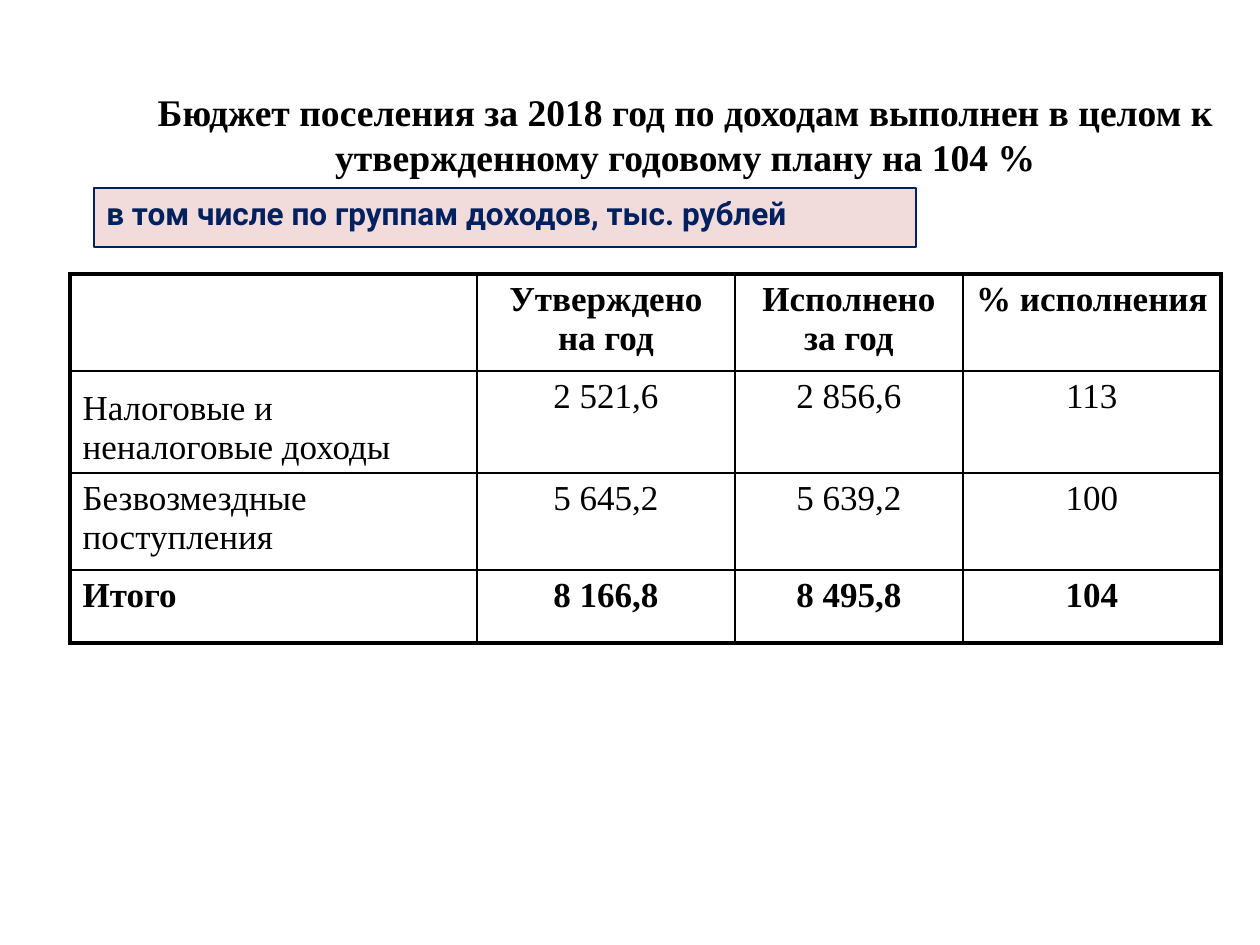
from lxml.etree import SubElement
from pptx import Presentation
from pptx.dml.color import RGBColor
from pptx.enum.shapes import MSO_SHAPE
from pptx.enum.text import MSO_ANCHOR, PP_ALIGN
from pptx.oxml.ns import qn
from pptx.util import Emu, Pt

THEME = {
    "black": "000000", "navy": "002060", "rose": "F2DCDB",
    "serif": "Times New Roman", "sans": "Roboto",
    "title": 21.5, "subtitle": 18, "body": 20,
    "frame": 2.25, "grid": 1, "outline": 0.75,
}


def px(count):
    return Emu(round(count * 914400 / 126))


def write(frame, text, face, size, color, bold, align):
    """Fill a text frame with one uniformly styled paragraph."""
    frame.word_wrap = True
    paragraph = frame.paragraphs[0]
    paragraph.text = text
    paragraph.alignment = align
    font = paragraph.font
    font.name, font.size, font.bold = THEME[face], Pt(THEME[size]), bold
    font.color.rgb = RGBColor.from_string(THEME[color])


prs = Presentation()
prs.slide_width, prs.slide_height = px(1260), px(945)
slide = prs.slides.add_slide(prs.slide_layouts[6])

title = slide.shapes.add_textbox(px(129), px(83), px(1113), px(103))
write(title.text_frame,
      "Бюджет поселения за 2018 год по доходам выполнен в целом к "
      "утвержденному годовому плану на 104 %",
      "serif", "title", "black", True, PP_ALIGN.CENTER)

subtitle = slide.shapes.add_shape(MSO_SHAPE.RECTANGLE, px(94), px(188), px(822), px(59))
subtitle.shadow.inherit = False
subtitle.fill.solid()
subtitle.fill.fore_color.rgb = RGBColor.from_string(THEME["rose"])
subtitle.line.color.rgb = RGBColor.from_string(THEME["navy"])
subtitle.line.width = Pt(THEME["outline"])
subtitle.text_frame.vertical_anchor = MSO_ANCHOR.TOP
write(subtitle.text_frame, "в том числе по группам доходов, тыс. рублей",
      "sans", "subtitle", "navy", True, PP_ALIGN.LEFT)

income = [
    ["", "Утверждено на год", "Исполнено за год", "% исполнения"],
    ["Налоговые и неналоговые доходы", "2 521,6", "2 856,6", "113"],
    ["Безвозмездные поступления", "5 645,2", "5 639,2", "100"],
    ["Итого", "8 166,8", "8 495,8", "104"],
]
col_widths = [407, 258, 228, 258]
row_heights = [97, 102, 97, 73]
last_row, last_col = len(row_heights) - 1, len(col_widths) - 1

budget = slide.shapes.add_table(len(row_heights), len(col_widths), px(70), px(274),
                                px(sum(col_widths)), px(sum(row_heights))).table
budget.first_row = budget.horz_banding = False
for column, width in zip(budget.columns, col_widths):
    column.width = px(width)
for row, height in zip(budget.rows, row_heights):
    row.height = px(height)

for r, values in enumerate(income):
    for c, value in enumerate(values):
        cell = budget.cell(r, c)
        write(cell.text_frame, value, "serif", "body", "black", r in (0, last_row),
              PP_ALIGN.CENTER if c else PP_ALIGN.LEFT)
        if (r, c) == (1, 0):
            cell.vertical_anchor = MSO_ANCHOR.BOTTOM

        # Borders must precede the fill in the cell properties.
        properties = cell._tc.get_or_add_tcPr()
        on_frame = {"a:lnL": c == 0, "a:lnR": c == last_col,
                    "a:lnT": r == 0, "a:lnB": r == last_row}
        for side, outer in on_frame.items():
            weight = THEME["frame" if outer else "grid"]
            border = SubElement(properties, qn(side), w=str(Pt(weight)))
            fill = SubElement(border, qn("a:solidFill"))
            SubElement(fill, qn("a:srgbClr"), val=THEME["black"])
        cell.fill.background()

prs.save("out.pptx")
